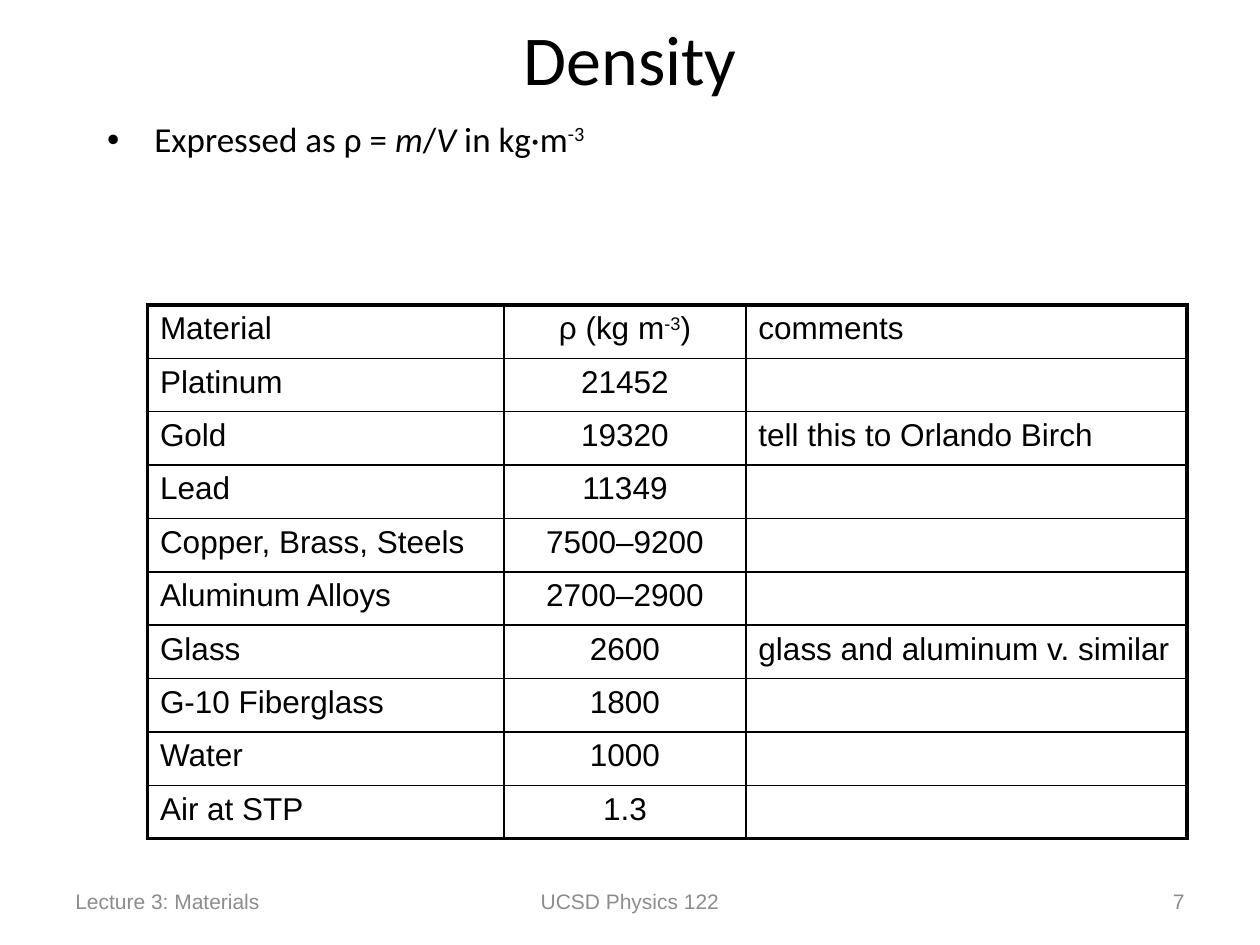
from dataclasses import dataclass

from lxml.etree import SubElement
from pptx import Presentation
from pptx.dml.color import RGBColor
from pptx.enum.text import MSO_ANCHOR, PP_ALIGN as Align
from pptx.oxml.ns import qn
from pptx.util import Inches, Pt


@dataclass(frozen=True)
class Theme:
    heading_font: str = "Calibri"
    table_font: str = "Arial"
    ink: str = "000000"
    muted: str = "8C8C8C"
    title_size: int = 40
    body_size: int = 20
    table_size: int = 18
    footer_size: int = 12
    outer_line: float = 2.25
    inner_line: float = 1


THEME = Theme()
COLUMN_WIDTHS = (2.83, 1.92, 3.5)
MATERIALS = (
    ("Material", (("ρ (kg m", ""), ("-3", "super"), (")", "")), "comments"),
    ("Platinum", "21452", ""),
    ("Gold", "19320", "tell this to Orlando Birch"),
    ("Lead", "11349", ""),
    ("Copper, Brass, Steels", "7500–9200", ""),
    ("Aluminum Alloys", "2700–2900", ""),
    ("Glass", "2600", "glass and aluminum v. similar"),
    ("G-10 Fiberglass", "1800", ""),
    ("Water", "1000", ""),
    ("Air at STP", "1.3", ""),
)
DEFINITION = (
    ("Expressed as ρ = ", ""),
    ("m", "italic"),
    ("/", ""),
    ("V", "italic"),
    (" in kg·m", ""),
    ("-3", "super"),
)


def place(shape, box):
    shape.left, shape.top, shape.width, shape.height = map(Inches, box)


def write(para, content, font, size, color, align=Align.LEFT):
    para.alignment = align
    para.font.name = font
    para.font.size = Pt(size)
    para.font.color.rgb = RGBColor.from_string(color)
    parts = ((content, ""),) if isinstance(content, str) else content
    for words, style in parts:
        span = para.add_run()
        span.text = words
        if style == "italic":
            span.font.italic = True
        elif style == "super":
            span.font._element.set("baseline", "30000")


def add_title(page, box):
    title = page.shapes.title
    place(title, box)
    title.text_frame.vertical_anchor = MSO_ANCHOR.MIDDLE
    write(title.text_frame.paragraphs[0], "Density", THEME.heading_font,
          THEME.title_size, THEME.ink, Align.CENTER)


def add_definition(page, box):
    body = page.placeholders[1]
    place(body, box)
    para = body.text_frame.paragraphs[0]
    para.line_spacing = 0.9
    write(para, DEFINITION, THEME.heading_font, THEME.body_size, THEME.ink)


def draw_borders(cell, outer_sides):
    properties = cell._tc.get_or_add_tcPr()
    for side in "LRTB":
        width = THEME.outer_line if side in outer_sides else THEME.inner_line
        line = SubElement(properties, qn(f"a:ln{side}"), w=str(Pt(width)))
        fill = SubElement(line, qn("a:solidFill"))
        SubElement(fill, qn("a:srgbClr"), val=THEME.ink)


def add_density_table(page, box):
    row_count, column_count = len(MATERIALS), len(COLUMN_WIDTHS)
    table = page.shapes.add_table(row_count, column_count, *map(Inches, box)).table
    table.first_row = table.horz_banding = False
    for column, width in zip(table.columns, COLUMN_WIDTHS):
        column.width = Inches(width)
    for row_index, record in enumerate(MATERIALS):
        table.rows[row_index].height = Inches(box[3] / row_count)
        for column_index, content in enumerate(record):
            cell = table.cell(row_index, column_index)
            edges = {
                "L": column_index == 0,
                "R": column_index == column_count - 1,
                "T": row_index == 0,
                "B": row_index == row_count - 1,
            }
            draw_borders(cell, [side for side, outer in edges.items() if outer])
            cell.fill.background()
            para = cell.text_frame.paragraphs[0]
            para.space_before = Pt(0.2 * THEME.table_size)
            align = Align.CENTER if column_index == 1 else Align.LEFT
            if content:
                write(para, content, THEME.table_font, THEME.table_size,
                      THEME.ink, align)


def add_footer(page, box):
    left, top, width, height = box
    side, middle = 2.33, 3.17
    items = (
        ("Lecture 3: Materials", left, side, Align.LEFT),
        ("UCSD Physics 122", left + (width - middle) / 2, middle, Align.CENTER),
        ("7", left + width - side, side, Align.RIGHT),
    )
    for words, start, extent, align in items:
        label = page.shapes.add_textbox(*map(Inches, (start, top, extent, height)))
        frame = label.text_frame
        frame.word_wrap = True
        frame.vertical_anchor = MSO_ANCHOR.MIDDLE
        write(frame.paragraphs[0], words, THEME.table_font, THEME.footer_size,
              THEME.muted, align)


def main():
    deck = Presentation()
    deck.slide_width, deck.slide_height = Inches(10), Inches(7.5)
    page = deck.slides.add_slide(deck.slide_layouts[1])
    add_footer(page, (0.5, 6.95, 9, 0.4))
    add_title(page, (0.75, -0.17, 8.5, 1.25))
    add_definition(page, (0.75, 0.92, 8.5, 1.67))
    add_density_table(page, (1.17, 2.42, 8.25, 4.24))
    deck.save("out.pptx")


if __name__ == "__main__":
    main()
